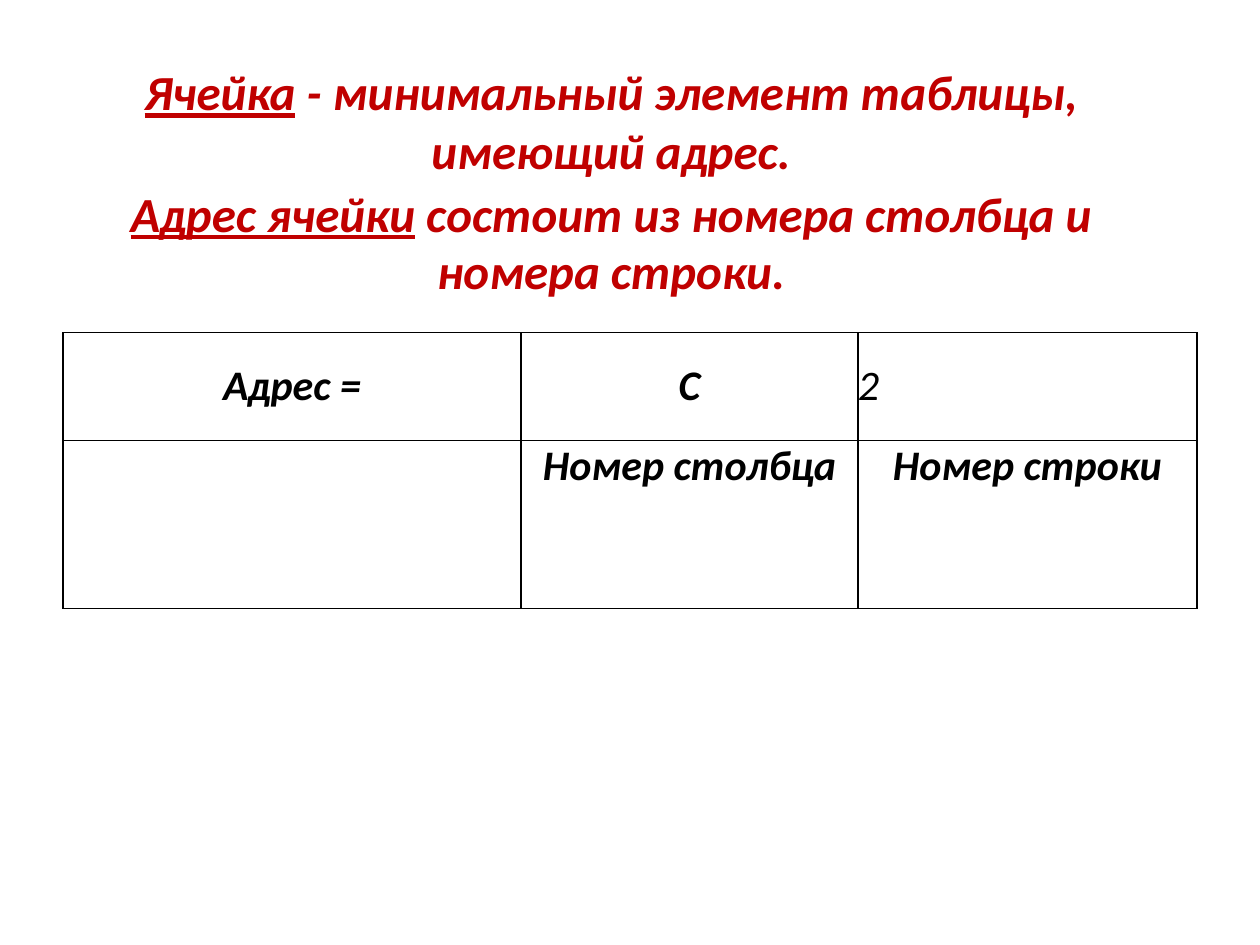
from lxml.etree import SubElement
from pptx import Presentation
from pptx.dml.color import RGBColor
from pptx.enum.shapes import MSO_SHAPE
from pptx.enum.text import MSO_ANCHOR, PP_ALIGN
from pptx.oxml.ns import qn
from pptx.util import Inches, Pt

WHITE = RGBColor(0xFF, 0xFF, 0xFF)
BLACK = RGBColor(0, 0, 0)
RED = RGBColor(0xC0, 0, 0)
FONT = "Calibri"
WIDTH, HEIGHT = Inches(10), Inches(7.5)
DEFINITIONS = [
    ("Ячейка", " - минимальный элемент таблицы, имеющий адрес."),
    ("Адрес ячейки", " состоит из номера столбца и номера строки."),
]
ADDRESS_ROWS = [["Адрес =", "C", "2"], ["", "Номер столбца", "Номер строки"]]
COLUMN_SHARES = (0.404, 0.297, 0.299)
ROW_SHARES = (0.39, 0.61)
BORDERS = {"a:lnL": 1, "a:lnR": 1, "a:lnT": 0.5, "a:lnB": 0.5}


def share(x, y, w, h):
    """Turn shares of the slide into a box of lengths."""
    return int(x * WIDTH), int(y * HEIGHT), int(w * WIDTH), int(h * HEIGHT)


def style(r, size, color, bold=True):
    """Format a run in the slide's italic face."""
    r.font.name, r.font.size = FONT, Pt(size)
    r.font.bold, r.font.italic = bold, True
    r.font.color.rgb = color


def add_definitions(s, box):
    """Place the definitions with their terms underlined."""
    sp = s.shapes.add_shape(MSO_SHAPE.RECTANGLE, *box)
    sp.shadow.inherit = False
    sp.fill.solid()
    sp.fill.fore_color.rgb = WHITE
    sp.line.fill.background()
    tf = sp.text_frame
    tf.word_wrap = True
    tf.vertical_anchor = MSO_ANCHOR.TOP
    tf.margin_left = tf.margin_top = tf.margin_right = tf.margin_bottom = 0
    for i, parts in enumerate(DEFINITIONS):
        p = tf.add_paragraph() if i else tf.paragraphs[0]
        p.alignment = PP_ALIGN.CENTER
        for part, underline in zip(parts, (True, False)):
            r = p.add_run()
            r.text = part
            style(r, 28, RED)
            r.font.underline = underline
    tf.paragraphs[0].space_after = Pt(4.2)
    tf.paragraphs[1].line_spacing = 0.97


def add_borders(cell):
    """Draw black lines on the four sides of a cell."""
    tc_pr = cell._tc.get_or_add_tcPr()
    for tag, width in BORDERS.items():
        ln = SubElement(tc_pr, qn(tag), w=str(Pt(width)))
        fill = SubElement(ln, qn("a:solidFill"))
        SubElement(fill, qn("a:srgbClr"), val=str(BLACK))


def fill_cell(cell, text, is_header, is_number):
    """Write and format one cell of the address table."""
    cell.margin_left = cell.margin_top = cell.margin_right = cell.margin_bottom = 0
    cell.vertical_anchor = MSO_ANCHOR.MIDDLE if is_header else MSO_ANCHOR.TOP
    add_borders(cell)
    cell.fill.background()
    cell.text_frame.text = text
    p = cell.text_frame.paragraphs[0]
    p.alignment = PP_ALIGN.LEFT if is_number else PP_ALIGN.CENTER
    if not is_header:
        p.line_spacing, p.space_before = 0.97, Pt(2.8)
    for r in p.runs:
        style(r, 24, BLACK, bold=not is_number)


def add_address_table(s, box):
    """Place the table that splits an address into column and row."""
    table = s.shapes.add_table(len(ROW_SHARES), len(COLUMN_SHARES), *box).table
    table.first_row = table.horz_banding = False
    for column, part in zip(table.columns, COLUMN_SHARES):
        column.width = int(box[2] * part)
    for row, part in zip(table.rows, ROW_SHARES):
        row.height = int(box[3] * part)
    for i, texts in enumerate(ADDRESS_ROWS):
        for j, text in enumerate(texts):
            fill_cell(table.cell(i, j), text, i == 0, text.isdigit())


def main():
    """Build and save the slide."""
    prs = Presentation()
    prs.slide_width, prs.slide_height = WIDTH, HEIGHT
    s = prs.slides.add_slide(prs.slide_layouts[6])
    s.background.fill.solid()
    s.background.fill.fore_color.rgb = WHITE
    add_definitions(s, share(0.1, 0.065, 0.77, 0.25))
    add_address_table(s, share(0.05, 0.352, 0.9, 0.292))
    prs.save("out.pptx")


if __name__ == "__main__":
    main()
